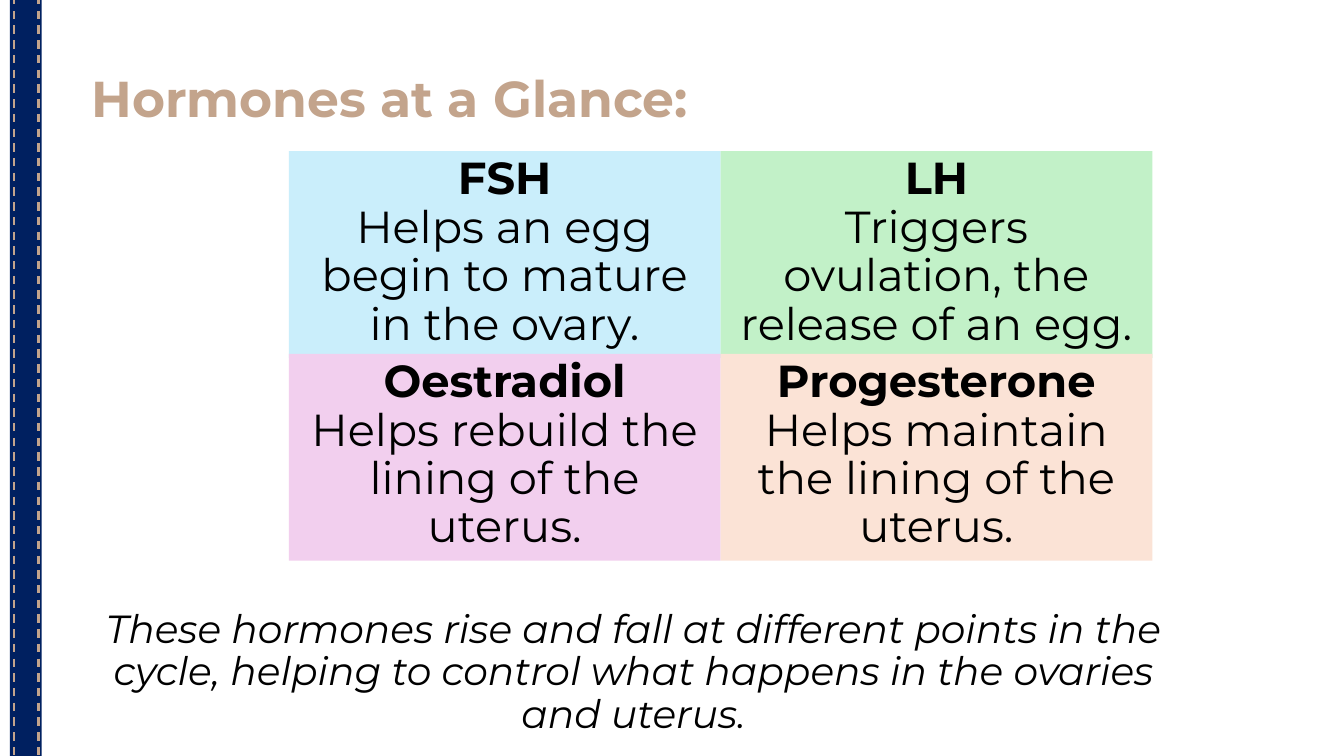
from lxml import etree
from pptx import Presentation, util as u
from pptx.dml.color import RGBColor
from pptx.enum import dml, shapes, text
from pptx.oxml.ns import qn

COLOURS = {
    "navy": "002060",
    "tan": "C3A48C",
    "black": "000000",
    "blue": "CAEEFB",
    "green": "C2F1C8",
    "pink": "F2CFEE",
    "peach": "FBE3D6",
}

HORMONES = [
    ("FSH", "Helps an egg begin to mature in the ovary.", "blue"),
    ("LH", "Triggers ovulation, the release of an egg.", "green"),
    ("Oestradiol", "Helps rebuild the lining of the uterus.", "pink"),
    ("Progesterone", "Helps maintain the lining of the uterus.", "peach"),
]


def colour(name):
    return RGBColor.from_string(COLOURS[name])


def add_text(paragraph, words, size, font="Montserrat", tint="black", bold=False, italic=False):
    run = paragraph.add_run()
    run.text = words
    run.font.name = font
    run.font.size = u.Pt(size)
    run.font.bold = bold
    run.font.italic = italic
    run.font.color.rgb = colour(tint)


class GlanceSlide:
    def __init__(self, slide):
        self.shapes = slide.shapes
        self.spacing = 0.9

    def paragraph(self, shape, align):
        frame = shape.text_frame
        frame.word_wrap = True
        frame.vertical_anchor = text.MSO_ANCHOR.TOP
        first = frame.paragraphs[0]
        first.alignment = align
        first.line_spacing = self.spacing
        return first

    def block(self, left, top, width, height, fill):
        block = self.shapes.add_shape(shapes.MSO_SHAPE.RECTANGLE, *map(u.Cm, (left, top, width, height)))
        block.shadow.inherit = False
        block.fill.solid()
        block.fill.fore_color.rgb = colour(fill)
        block.line.fill.background()
        return block

    def stitch(self, x, top, bottom):
        stitch = self.shapes.add_connector(
            shapes.MSO_CONNECTOR.STRAIGHT, *map(u.Cm, (x, top, x, bottom)))
        stitch.line.color.rgb = colour("tan")
        stitch.line.width = u.Pt(1.5)
        stitch.line.dash_style = dml.MSO_LINE.DASH
        etree.SubElement(stitch._element.spPr, qn("a:effectLst"))

    def card(self, left, top, width, height, hormone, role, fill):
        card = self.block(left, top, width, height, fill)
        body = self.paragraph(card, text.PP_ALIGN.CENTER)
        add_text(body, hormone, 32, bold=True)
        body.add_line_break()
        add_text(body, role, 32)

    def label(self, left, top, width, height, words, align=text.PP_ALIGN.LEFT, **style):
        label = self.shapes.add_textbox(*map(u.Cm, (left, top, width, height)))
        add_text(self.paragraph(label, align), words, **style)


def main():
    deck = Presentation()
    deck.slide_width, deck.slide_height = u.Cm(33.87), u.Cm(19.05)
    glance = GlanceSlide(deck.slides.add_slide(deck.slide_layouts[6]))

    glance.block(0.25, -0.03, 0.8, 19.08, "navy")
    for x in (0.36, 0.97):
        glance.stitch(x, -0.1, 19.13)

    glance.label(2.06, 1.73, 21.06, 2.06, "Hormones at a Glance:", size=36, tint="tan", bold=True)

    card_width, card_height, row_step = 10.88, 5.21, 5.11
    for index, (hormone, role, fill) in enumerate(HORMONES):
        row, column = divmod(index, 2)
        glance.card(7.28 + column * card_width, 3.81 + row * row_step,
                    card_width, card_height, hormone, role, fill)

    glance.label(2.26, 15.24, 27.41, 2.67,
                 "These hormones rise and fall at different points in the cycle, "
                 "helping to control what happens in the ovaries and uterus.",
                 align=text.PP_ALIGN.CENTER, size=28, italic=True)

    deck.save("out.pptx")


if __name__ == "__main__":
    main()
